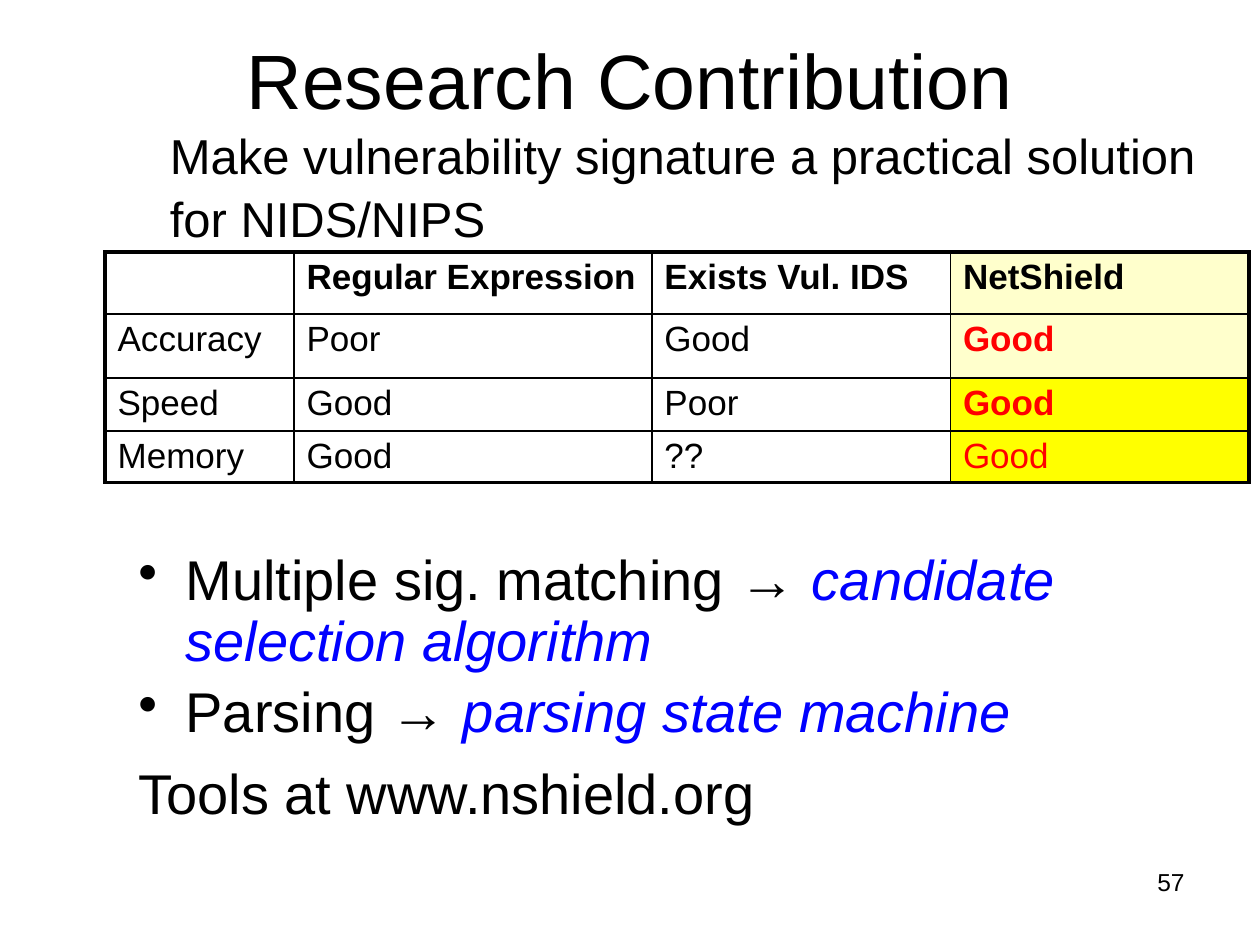
from typing import NamedTuple

from lxml import etree
from pptx import Presentation
from pptx.dml.color import RGBColor
from pptx.enum import text as t
from pptx.oxml import ns
from pptx.util import Pt

BLACK = RGBColor(0, 0, 0)
RED = RGBColor(255, 0, 0)
BLUE = RGBColor(0, 0, 255)
CREAM = RGBColor(255, 255, 204)
YELLOW = RGBColor(255, 255, 0)
THIN, THICK = 1, 2.25
HANG = 27


class Run(NamedTuple):
    text: str
    color: RGBColor = BLACK
    italic: bool = False


class Line(NamedTuple):
    runs: list[Run]
    bullet: bool = False
    before: float = 0


class Box(NamedTuple):
    left: float
    top: float
    width: float
    height: float


class Row(NamedTuple):
    height: float
    cells: list[str]
    fill: RGBColor
    bold: list[bool]
    color: RGBColor = RED


COLS = [108, 204.5, 170.6, 170.6]
ROWS = [
    Row(35.3, ["", "Regular Expression", "Exists Vul. IDS", "NetShield"],
        CREAM, [True] * 4, BLACK),
    Row(36.7, ["Accuracy", "Poor", "Good", "Good"], CREAM, [False] * 3 + [True]),
    Row(30.2, ["Speed", "Good", "Poor", "Good"], YELLOW, [False] * 3 + [True]),
    Row(28.8, ["Memory", "Good", "??", "Good"], YELLOW, [False] * 4),
]
GOAL = [
    Line([Run("Make vulnerability signature a practical solution")]),
    Line([Run("for NIDS/NIPS")], before=5.6),
]
POINTS = [
    Line([Run("Multiple sig. matching → "),
          Run("candidate selection algorithm", BLUE, True)], bullet=True),
    Line([Run("Parsing → "), Run("parsing state machine", BLUE, True)],
         bullet=True, before=6.4),
    Line([Run("Tools at www.nshield.org")], before=12),
]


def style(para, size: float, color: RGBColor = BLACK, bold: bool = False) -> None:
    font = para.font
    font.name, font.size, font.bold = "Arial", Pt(size), bold
    font.color.rgb = color


def add_box(slide, box: Box):
    frame = slide.shapes.add_textbox(*map(Pt, box)).text_frame
    frame.word_wrap = True
    return frame


def add_lines(slide, box: Box, lines: list[Line], size: float) -> None:
    """Write paragraphs with a hanging indent."""
    frame = add_box(slide, box)
    for i, line in enumerate(lines):
        para = frame.add_paragraph() if i else frame.paragraphs[0]
        para.line_spacing = 0.9
        para.space_before = Pt(line.before)
        props = para._p.get_or_add_pPr()
        props.set("marL", str(Pt(HANG)))
        props.set("indent", str(-Pt(HANG)))
        if line.bullet:
            etree.SubElement(props, ns.qn("a:buChar"), char="•")
        style(para, size)
        for part in line.runs:
            run = para.add_run()
            run.text = part.text
            run.font.color.rgb = part.color
            run.font.italic = part.italic


def set_edges(cell, widths: dict[str, float]) -> None:
    """Draw black cell borders, given a width for each side."""
    props = cell._tc.get_or_add_tcPr()
    for i, (side, width) in enumerate(widths.items()):
        edge = etree.Element(ns.qn(f"a:ln{side}"), w=str(Pt(width)))
        fill = etree.SubElement(edge, ns.qn("a:solidFill"))
        etree.SubElement(fill, ns.qn("a:srgbClr"), val=str(BLACK))
        props.insert(i, edge)


def add_grid(slide, left: float, top: float) -> None:
    size = Pt(sum(COLS)), Pt(sum(row.height for row in ROWS))
    frame = slide.shapes.add_table(len(ROWS), len(COLS), Pt(left), Pt(top), *size)
    table = frame.table
    table.first_row = table.horz_banding = False
    for col, width in zip(table.columns, COLS):
        col.width = Pt(width)
    end_r, end_c = len(ROWS) - 1, len(COLS) - 1
    for r, row in enumerate(ROWS):
        table.rows[r].height = Pt(row.height)
        for c, words in enumerate(row.cells):
            cell = table.cell(r, c)
            last = c == end_c
            cell.text = words
            style(cell.text_frame.paragraphs[0], 20,
                  row.color if last else BLACK, row.bold[c])
            if last:
                cell.fill.solid()
                cell.fill.fore_color.rgb = row.fill
            else:
                cell.fill.background()
            outer = {"L": c == 0, "R": last, "T": r == 0, "B": r == end_r}
            set_edges(cell, {side: THICK if out else THIN
                             for side, out in outer.items()})


def add_title(slide, box: Box, words: str) -> None:
    title = slide.shapes.title
    title.left, title.top, title.width, title.height = map(Pt, box)
    frame = title.text_frame
    frame.text = words
    frame.vertical_anchor = t.MSO_ANCHOR.MIDDLE
    para = frame.paragraphs[0]
    para.alignment = t.PP_ALIGN.CENTER
    style(para, 44)


def add_number(slide, box: Box, words: str) -> None:
    para = add_box(slide, box).paragraphs[0]
    para.text = words
    para.alignment = t.PP_ALIGN.RIGHT
    style(para, 14)


def main() -> None:
    deck = Presentation()
    deck.slide_width, deck.slide_height = Pt(720), Pt(540)
    slide = deck.slides.add_slide(deck.slide_layouts[5])
    add_title(slide, Box(36, 0, 648, 90), "Research Contribution")
    add_grid(slide, 60, 144)
    add_lines(slide, Box(72, 312, 648, 108), POINTS, 32)
    add_lines(slide, Box(90, 72, 648, 108), GOAL, 28)
    add_number(slide, Box(516, 492, 168, 37.5), "57")
    deck.save("out.pptx")


if __name__ == "__main__":
    main()
